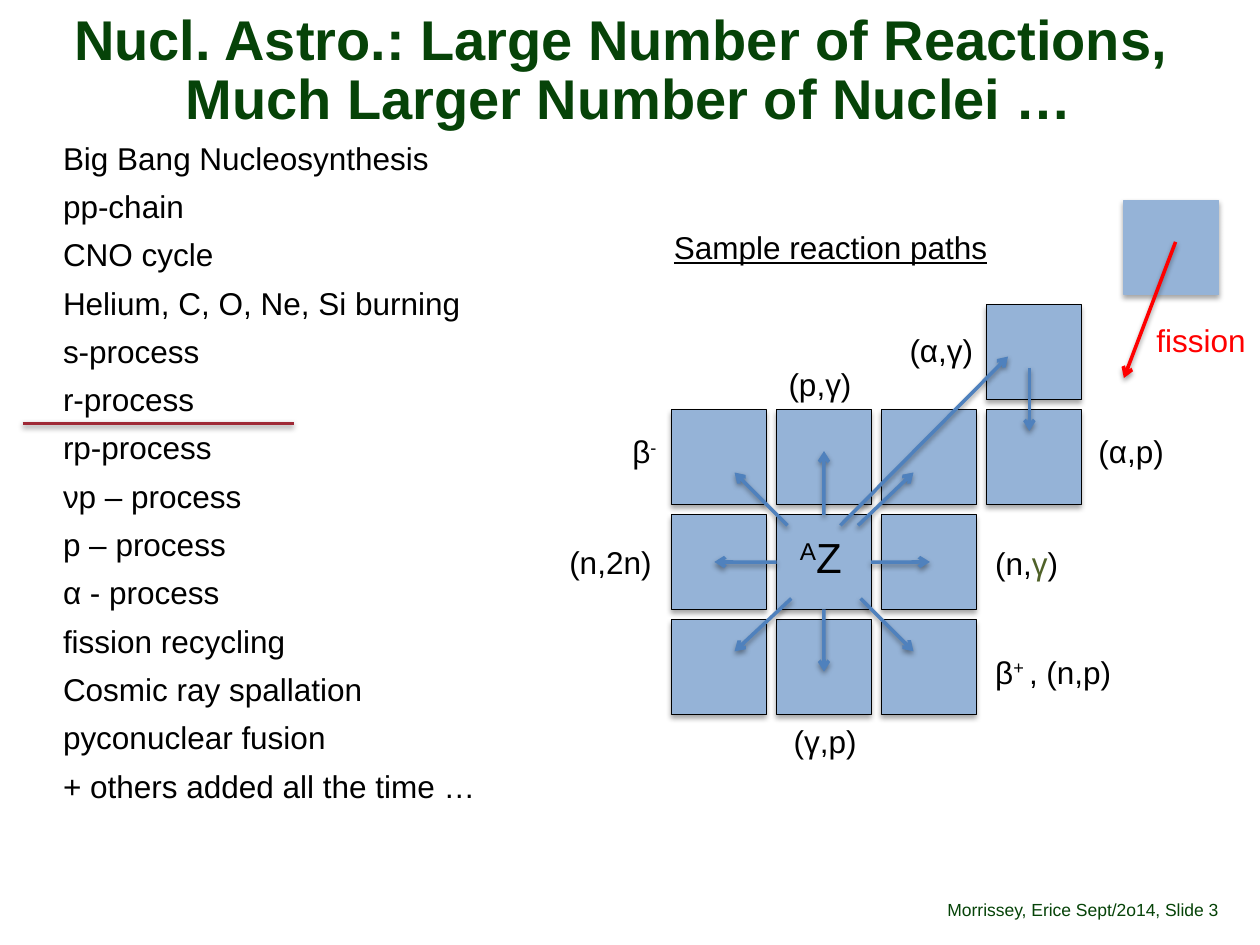
from lxml import etree
from pptx import Presentation
from pptx.dml.color import RGBColor
from pptx.enum.shapes import MSO_CONNECTOR, MSO_SHAPE
from pptx.enum.text import MSO_ANCHOR, MSO_AUTO_SIZE, PP_ALIGN
from pptx.oxml import parse_xml
from pptx.oxml.ns import nsdecls, qn
from pptx.util import Inches, Pt

RECT, STRAIGHT = MSO_SHAPE.RECTANGLE, MSO_CONNECTOR.STRAIGHT
MIDDLE, TOP, BOTTOM = MSO_ANCHOR.MIDDLE, MSO_ANCHOR.TOP, MSO_ANCHOR.BOTTOM
LEFT, CENTER, RIGHT = PP_ALIGN.LEFT, PP_ALIGN.CENTER, PP_ALIGN.RIGHT
FIT, FIXED = MSO_AUTO_SIZE.SHAPE_TO_FIT_TEXT, MSO_AUTO_SIZE.NONE

GREEN, BLACK, RED, OLIVE = "064308", "000000", "FF0000", "4F6128"
TILE_BLUE, ARROW_BLUE, MAROON = "95B3D7", "4F81BD", "9F2936"

# Chart of nuclides: square tiles on an even grid
GRID_LEFT, GRID_TOP, PITCH, TILE = 5.33, 2.42, 5 / 6, 0.75
NEIGHBOURS = [(0, 1), (1, 1), (2, 1), (3, 1), (0, 2), (2, 2),
              (0, 3), (1, 3), (2, 3), (3, 0)]

PROCESSES = [
    "Big Bang Nucleosynthesis", "pp-chain", "CNO cycle",
    "Helium, C, O, Ne, Si burning", "s-process", "r-process", "rp-process",
    "νp – process", "p – process", "α - process", "fission recycling",
    "Cosmic ray spallation", "pyconuclear fusion",
    "+ others added all the time …",
]

# Arrows that leave the middle of a side of the AZ tile: side, end point
SIDE_REACTIONS = [(0, (6.54, 3.58)), (1, (5.67, 4.46)),
                  (2, (6.54, 5.33)), (3, (7.38, 4.46))]
# Other reaction arrows: start, end
FREE_REACTIONS = [
    ((6.81, 4.17), (7.25, 3.75)), ((6.25, 4.17), (5.83, 3.75)),
    ((6.28, 4.75), (5.83, 5.17)), ((6.83, 4.75), (7.25, 5.17)),
    ((6.67, 4.17), (8, 2.83)), ((8.17, 2.92), (8.17, 3.42)),
]

# Labels: left, top, width, runs as (text, colour, raised)
LABELS = [
    (9.08, 2.5, 0.92, [("fission", RED, False)]),
    (7.12, 2.58, 0.71, [("(α,γ)", BLACK, False)]),
    (7.8, 5.13, 1.15, [("β", BLACK, False), ("+ ", BLACK, True),
                       (", (n,p)", BLACK, False)]),
    (4.92, 3.38, 0.4, [("β", BLACK, False), ("-", BLACK, True)]),
    (6.16, 2.85, 0.71, [("(p,γ)", BLACK, False)]),
    (8.62, 3.38, 0.73, [("(α,p)", BLACK, False)]),
    (4.42, 4.26, 0.86, [("(n,2n)", BLACK, False)]),
    (7.8, 4.27, 0.71, [("(n,", BLACK, False), ("γ", OLIVE, False),
                       (")", BLACK, False)]),
    (6.2, 5.68, 0.71, [("(γ,p)", BLACK, False)]),
]


def rgb(code):
    return RGBColor.from_string(code)


def place(box, left, top, width, height):
    box.left, box.top = Inches(left), Inches(top)
    box.width, box.height = Inches(width), Inches(height)


def style_font(font, size, color, bold=False):
    font.name, font.size, font.bold = "Arial", Pt(size), bold
    font.color.rgb = rgb(color)


def style_frame(frame, anchor, side, end, autosize=FIXED, wrap=True):
    frame.word_wrap, frame.auto_size = wrap, autosize
    frame.vertical_anchor = anchor
    frame.margin_left = frame.margin_right = Inches(side)
    frame.margin_top = frame.margin_bottom = Inches(end)


def cast_shadow(sp_pr, distance, opacity):
    """Give a shape or connector a soft shadow straight below it."""
    for old in sp_pr.findall(qn("a:effectLst")):
        sp_pr.remove(old)
    sp_pr.append(parse_xml(
        f'<a:effectLst {nsdecls("a")}><a:outerShdw blurRad="{Pt(3.1)}" '
        f'dist="{Pt(distance)}" dir="5400000" rotWithShape="0">'
        f'<a:srgbClr val="000000"><a:alpha val="{opacity * 1000}"/>'
        '</a:srgbClr></a:outerShdw></a:effectLst>'))


def add_title(slide, text):
    title = slide.shapes.title
    place(title, 0.08, 0.07, 9.83, 1.01)
    frame = title.text_frame
    frame.text = text
    style_frame(frame, MIDDLE, 0.06, 0.02)
    line = frame.paragraphs[0]
    line.alignment, line.line_spacing = CENTER, 0.88
    for run in line.runs:
        style_font(run.font, 32, GREEN, True)


def add_list(slide, items):
    body = slide.placeholders[1]
    place(body, 0.5, 1.1, 4, 5.5)
    frame = body.text_frame
    frame.text = "\n".join(items)
    style_frame(frame, TOP, 0, 0)
    for number, item in enumerate(frame.paragraphs):
        item.space_before = Pt(6 if number else 0)
        p_pr = item._p.get_or_add_pPr()
        p_pr.set("marL", "0")
        p_pr.set("indent", "0")
        etree.SubElement(p_pr, qn("a:buNone"))
        style_font(item.runs[0].font, 18, BLACK)


def add_footer(slide, text, left, width, align):
    footer = slide.shapes.add_textbox(
        Inches(left), Inches(6.95), Inches(width), Inches(0.4))
    footer.text_frame.text = text
    style_frame(footer.text_frame, BOTTOM, 0, 0.05)
    line = footer.text_frame.paragraphs[0]
    line.alignment, line.line_spacing = align, 0.9
    style_font(line.runs[0].font, 10, GREEN)


def add_label(slide, left, top, width, runs, height=0.4, size=18):
    label = slide.shapes.add_textbox(
        Inches(left), Inches(top), Inches(width), Inches(height))
    style_frame(label.text_frame, TOP, 0.1, 0.05, FIT, False)
    line = label.text_frame.paragraphs[0]
    for text, color, raised in runs:
        run = line.add_run()
        run.text = text
        style_font(run.font, size, color)
        if raised:
            run._r.get_or_add_rPr().set("baseline", "30000")
    return line


def add_tile(slide, left, top, edge=BLACK, edge_width=0.5):
    tile = slide.shapes.add_shape(
        RECT, Inches(left), Inches(top), Inches(TILE), Inches(TILE))
    tile.fill.solid()
    tile.fill.fore_color.rgb = rgb(TILE_BLUE)
    tile.line.color.rgb = rgb(edge)
    tile.line.width = Pt(edge_width)
    tile.shadow.inherit = False
    cast_shadow(tile._element.spPr, 1.8, 35)
    return tile


def add_grid_tile(slide, column, row):
    return add_tile(slide, GRID_LEFT + column * PITCH, GRID_TOP + row * PITCH)


def add_line(slide, start, end, color=ARROW_BLUE, arrow=True):
    line = slide.shapes.add_connector(
        STRAIGHT, *(Inches(value) for value in (*start, *end)))
    line.line.color.rgb = rgb(color)
    line.line.width = Pt(2)
    if arrow:
        etree.SubElement(line.line._get_or_add_ln(), qn("a:tailEnd"),
                         type="arrow")
    cast_shadow(line._element.spPr, 1.6, 38)
    return line


def main():
    deck = Presentation()
    deck.slide_width, deck.slide_height = Inches(10), Inches(7.5)
    slide = deck.slides.add_slide(deck.slide_layouts[1])

    # Title, footer and list of processes
    add_title(slide, "Nucl. Astro.: Large Number of Reactions, \v"
                     "Much Larger Number of Nuclei …")
    add_footer(slide, "Morrissey, Erice Sept/2o14", 4.53, 4.64, RIGHT)
    add_footer(slide, ", Slide 3", 9.17, 0.83, LEFT)
    add_list(slide, PROCESSES)
    add_line(slide, (0.18, 3.36), (2.33, 3.36), MAROON, arrow=False)

    # Nuclides
    nucleus = add_grid_tile(slide, 1, 2)
    add_label(slide, 6.25, 4.17, 0.56,
              [("A", BLACK, True), ("Z", BLACK, False)], 0.5, 24)
    for column, row in NEIGHBOURS:
        add_grid_tile(slide, column, row)
    add_tile(slide, 8.92, 1.59, TILE_BLUE, 0.75)

    # Reaction arrows
    for side, end in SIDE_REACTIONS:
        add_line(slide, (6.54, 4.46), end).begin_connect(nucleus, side)
    for start, end in FREE_REACTIONS:
        add_line(slide, start, end)
    add_line(slide, (9.33, 1.92), (8.92, 3), RED)

    # Labels
    for label in LABELS:
        add_label(slide, *label)
    heading = add_label(slide, 5.25, 1.76, 2.71,
                        [("Sample reaction paths", BLACK, False)])
    heading.runs[0].font.underline = True

    deck.save("out.pptx")


if __name__ == "__main__":
    main()
